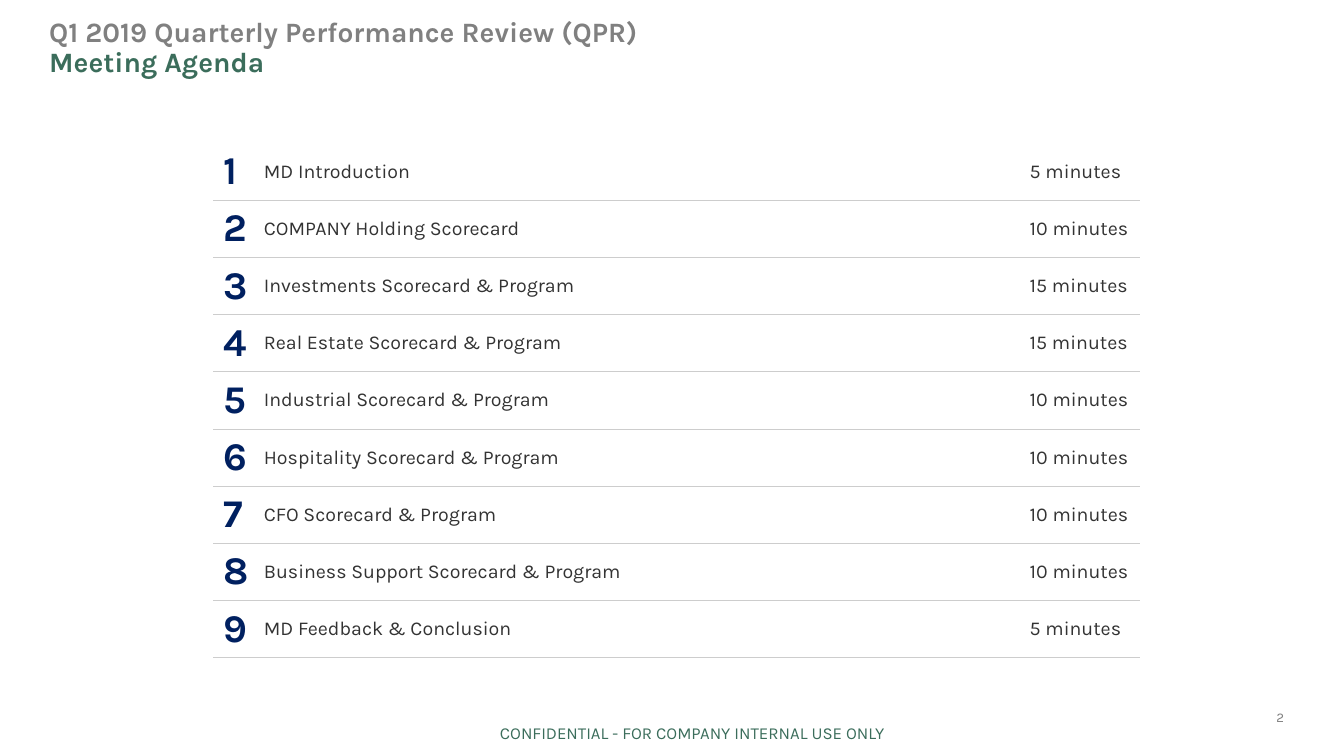
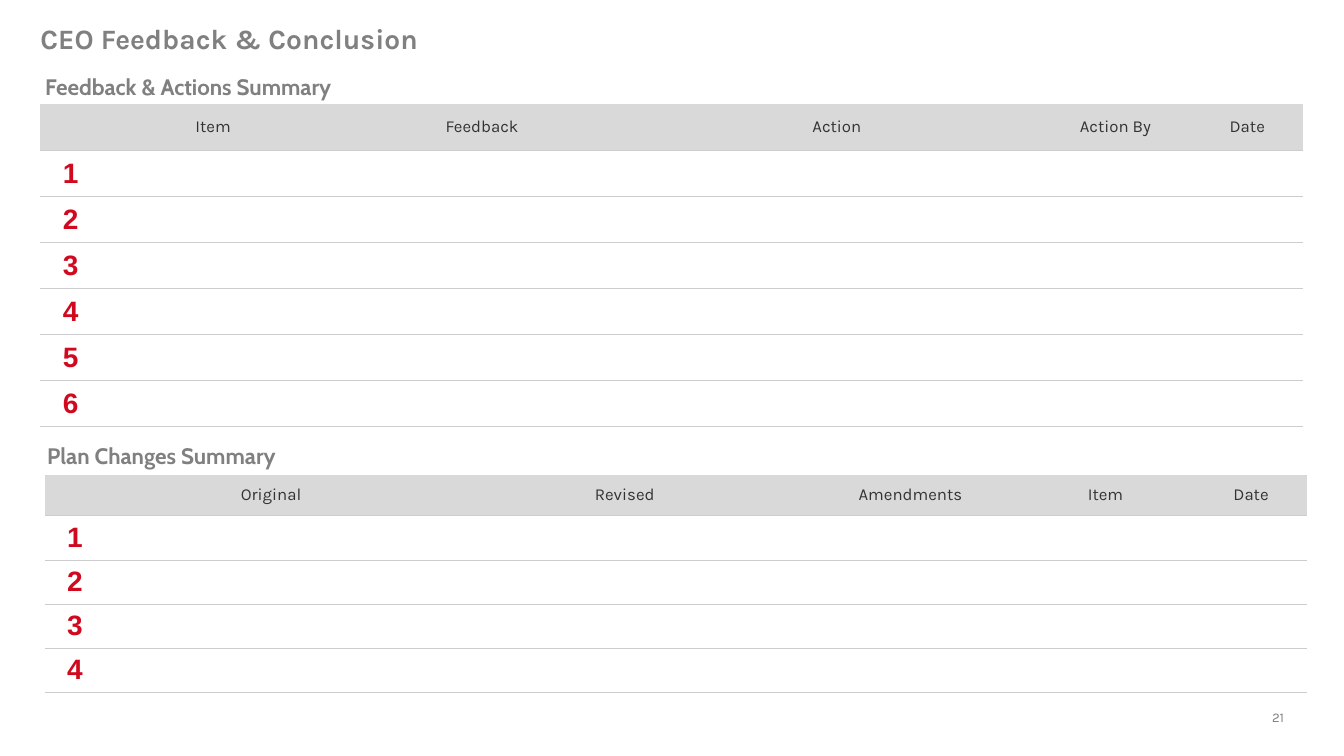
from dataclasses import dataclass

from lxml import etree
from pptx import Presentation
from pptx.dml.color import RGBColor
from pptx.enum.text import MSO_ANCHOR, PP_ALIGN
from pptx.oxml.ns import qn
from pptx.util import Cm, Pt


@dataclass(frozen=True)
class Theme:
    # Colours
    grey: str = "808080"
    green: str = "3B6D5B"
    navy: str = "002060"
    red: str = "D1091E"
    ink: str = "333333"
    band: str = "D9D9D9"
    rule: str = "CDCDCD"
    # Fonts
    body: str = "Karla"
    heading: str = "Cabin"
    digits: str = "Arial"
    # Sizes in points
    title_pt: float = 20
    heading_pt: float = 16
    agenda_pt: float = 14
    agenda_number_pt: float = 28
    label_pt: float = 12
    item_number_pt: float = 20
    page_pt: float = 9.5
    rule_pt: float = 0.75


THEME = Theme()
PLAIN_TABLE = "{2D5ABB26-0587-4C30-8999-92F81FD0307C}"


def write(p, text, size=THEME.label_pt, color=THEME.ink, font=THEME.body,
          bold=False, align=PP_ALIGN.LEFT, spacing=None):
    """Add one formatted run to a paragraph."""
    p.alignment = align
    if spacing:
        p.line_spacing = spacing
    r = p.add_run()
    r.text = text
    r.font.size = Pt(size)
    r.font.name = font
    r.font.bold = bold
    r.font.color.rgb = RGBColor.from_string(color)


def rule_below(cell):
    """Draw the thin line under a table cell."""
    line = etree.Element(qn("a:lnB"), w=str(Pt(THEME.rule_pt)))
    fill = etree.SubElement(line, qn("a:solidFill"))
    etree.SubElement(fill, qn("a:srgbClr"), val=THEME.rule)
    cell._tc.get_or_add_tcPr().insert(0, line)


class Deck:
    """Holds the presentation, the style and the current slide."""

    def __init__(self, theme):
        self.theme = theme
        self.prs = Presentation()
        self.prs.slide_width, self.prs.slide_height = Cm(33.87), Cm(19.05)
        self.s = None

    def slide(self, number):
        self.s = self.prs.slides.add_slide(self.prs.slide_layouts[6])
        p = self.box(29.82, 17.86, 2.54, 0.41, anchor=MSO_ANCHOR.MIDDLE)
        write(p, str(number), size=self.theme.page_pt, color=self.theme.grey,
              align=PP_ALIGN.RIGHT)

    def box(self, x, y, w, h, inset=0, anchor=MSO_ANCHOR.TOP):
        """Add a text box and return its first paragraph."""
        tf = self.s.shapes.add_textbox(Cm(x), Cm(y), Cm(w), Cm(h)).text_frame
        tf.word_wrap = True
        tf.vertical_anchor = anchor
        tf.margin_left = tf.margin_right = Cm(inset)
        tf.margin_top = tf.margin_bottom = 0
        return tf.paragraphs[0]

    def title(self, x, y, w, h, text, subtitle=None):
        p = self.box(x, y, w, h)
        style = dict(size=self.theme.title_pt, bold=True, spacing=0.88)
        write(p, text, color=self.theme.grey, **style)
        if subtitle:
            p.add_line_break()
            write(p, subtitle, color=self.theme.green, **style)

    def heading(self, x, y, text):
        write(self.box(x, y, 9.2, 0.69, inset=0.25), text,
              size=self.theme.heading_pt, color=self.theme.grey,
              font=self.theme.heading, bold=True)

    def footer(self, text):
        write(self.box(10.67, 18.21, 13.56, 0.51), text,
              color=self.theme.green, align=PP_ALIGN.CENTER)

    def table(self, x, y, widths, heights, rows, number, text, header=False):
        """Add a ruled table; number and text are the two cell formats."""
        t = self.s.shapes.add_table(len(rows), len(widths), Cm(x), Cm(y),
                                    Cm(sum(widths)), Cm(sum(heights))).table
        t.first_row = t.horz_banding = False
        t._tbl.tblPr.find(qn("a:tableStyleId")).text = PLAIN_TABLE
        for column, width in zip(t.columns, widths):
            column.width = Cm(width)
        for i, (row, height) in enumerate(zip(rows, heights)):
            t.rows[i].height = Cm(height)
            for j, value in enumerate(row):
                cell = t.cell(i, j)
                cell.vertical_anchor = MSO_ANCHOR.MIDDLE
                cell.margin_left = cell.margin_right = Cm(0.25)
                cell.margin_top = cell.margin_bottom = 0
                if header and i == 0:
                    cell.fill.solid()
                    cell.fill.fore_color.rgb = RGBColor.from_string(self.theme.band)
                else:
                    cell.fill.background()
                rule_below(cell)
                if value:
                    write(cell.text_frame.paragraphs[0], value,
                          **(text if j else number))

    def agenda(self, x, y, widths, height, items):
        rows = [(str(n), *item) for n, item in enumerate(items, 1)]
        self.table(x, y, widths, [height] * len(rows), rows,
                   number=dict(size=self.theme.agenda_number_pt,
                               color=self.theme.navy, bold=True),
                   text=dict(size=self.theme.agenda_pt))

    def blank_log(self, x, y, widths, header_height, height, labels, count):
        """Add a form with a header band and numbered empty rows."""
        empty = [""] * len(labels)
        rows = [["", *labels]] + [[str(n), *empty] for n in range(1, count + 1)]
        self.table(x, y, widths, [header_height] + [height] * count, rows,
                   number=dict(size=self.theme.item_number_pt,
                               color=self.theme.red, font=self.theme.digits,
                               bold=True, align=PP_ALIGN.CENTER),
                   text=dict(align=PP_ALIGN.CENTER), header=True)


def main():
    deck = Deck(THEME)

    # Meeting agenda
    deck.slide(2)
    deck.title(1.24, 0.48, 22.99, 2.11,
               "Q1 2019 Quarterly Performance Review (QPR)", "Meeting Agenda")
    deck.footer("CONFIDENTIAL - FOR COMPANY INTERNAL USE ONLY")
    deck.agenda(5.38, 3.61, [1.02, 19.3, 3.02], 1.44, [
        ("MD Introduction", "5 minutes"),
        ("COMPANY Holding Scorecard", "10 minutes"),
        ("Investments Scorecard & Program", "15 minutes"),
        ("Real Estate Scorecard & Program", "15 minutes"),
        ("Industrial Scorecard & Program", "10 minutes"),
        ("Hospitality Scorecard & Program", "10 minutes"),
        ("CFO Scorecard & Program", "10 minutes"),
        ("Business Support Scorecard & Program", "10 minutes"),
        ("MD Feedback & Conclusion", "5 minutes"),
    ])

    # Feedback and plan changes
    deck.slide(21)
    deck.title(1.02, 0.66, 26.24, 1.19, "CEO Feedback & Conclusion")
    deck.heading(0.89, 1.85, "Feedback & Actions Summary")
    deck.blank_log(1.02, 2.62, [1.52, 5.66, 7.9, 9.98, 4.06, 2.69], 1.17, 1.16,
                   ["Item", "Feedback", "Action", "Action By", "Date "], 6)
    deck.heading(0.94, 11.13, "Plan Changes Summary")
    deck.blank_log(1.13, 11.96, [1.52, 8.46, 9.37, 5.03, 4.7, 2.74], 1.04, 1.11,
                   ["Original ", "Revised ", "Amendments ", "Item", "Date "], 4)

    deck.prs.save("out.pptx")


if __name__ == "__main__":
    main()
